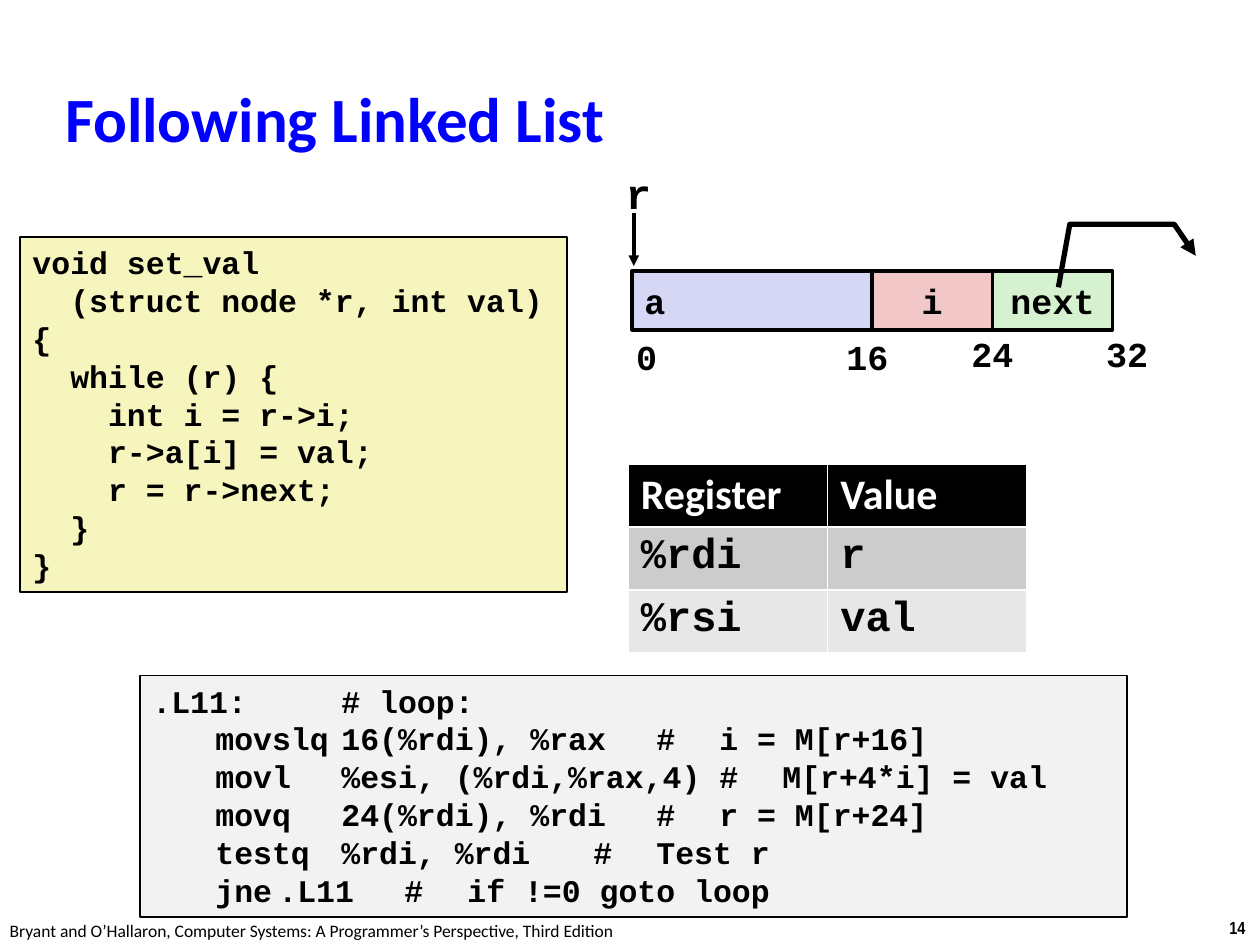
"""Build the slide on following a linked list, from C code to assembly."""
from pptx import Presentation
from pptx.dml.color import RGBColor
from pptx.enum.shapes import MSO_CONNECTOR, MSO_SHAPE
from pptx.enum.text import MSO_ANCHOR, MSO_AUTO_SIZE, PP_ALIGN
from pptx.oxml.ns import qn
from pptx.util import Pt
from lxml.etree import SubElement

COLOURS = {
    "ink": "000000", "title": "0000FF", "white": "FFFFFF",
    "c_code": "F6F5BD", "assembly": "F2F2F2",
    "array": "D6D6F5", "index": "F1C7C7", "next": "D5F1CF",
    "odd_row": "CCCCCC", "even_row": "E7E7E7",
}
CODE_FONT, TEXT_FONT = "Courier New", "Calibri"
CODE_SIZE, CODE_LEADING = 18, 21.6
CHARACTER = 0.6 * CODE_SIZE
ASSEMBLY_STOPS = [column * CHARACTER for column in (2, 10, 30, 34)]

C_CODE = """void set_val
  (struct node *r, int val)
{
  while (r) {
    int i = r->i;
    r->a[i] = val;
    r = r->next;
  }
}"""

ASSEMBLY = [
    ".L11:\t\t# loop:",
    "\tmovslq\t16(%rdi), %rax\t#\ti = M[r+16]",
    "\tmovl\t%esi, (%rdi,%rax,4)\t#\tM[r+4*i] = val",
    "\tmovq\t24(%rdi), %rdi\t#\tr = M[r+24]",
    "\ttestq\t%rdi, %rdi\t#\tTest r",
    "\tjne\t.L11\t#\tif !=0 goto loop",
]


def colour(name):
    return RGBColor.from_string(COLOURS[name])


def write(para, text, size=20, font=CODE_FONT, ink="ink", bold=True, align=PP_ALIGN.LEFT):
    para.alignment = align
    span = para.add_run()
    span.text = text
    span.font.size = Pt(size)
    span.font.name = font
    span.font.bold = bold
    span.font.color.rgb = colour(ink)


class Painter:
    def __init__(self, page):
        self.page = page
        self.shapes = page.shapes

    def title(self, text, left, top, width, height):
        box = self.shapes.title
        box.left, box.top, box.width, box.height = map(Pt, (left, top, width, height))
        frame = box.text_frame
        frame.auto_size = MSO_AUTO_SIZE.NONE
        frame.vertical_anchor = MSO_ANCHOR.MIDDLE
        write(frame.paragraphs[0], text, size=36, font=TEXT_FONT, ink="title")

    def label(self, text, left, top, width, height, **style):
        box = self.shapes.add_textbox(*map(Pt, (left, top, width, height)))
        box.text_frame.word_wrap = False
        write(box.text_frame.paragraphs[0], text, **style)

    def panel(self, left, top, width, height, fill, line=1):
        box = self.shapes.add_shape(MSO_SHAPE.RECTANGLE, *map(Pt, (left, top, width, height)))
        box.shadow.inherit = False
        box.fill.solid()
        box.fill.fore_color.rgb = colour(fill)
        self.outline(box, line)
        return box

    def field(self, text, left, top, width, height, fill, align=PP_ALIGN.CENTER):
        frame = self.panel(left, top, width, height, fill, line=2).text_frame
        frame.word_wrap = False
        frame.vertical_anchor = MSO_ANCHOR.MIDDLE
        write(frame.paragraphs[0], text, align=align)

    def code(self, lines, left, top, width, height, fill, stops=()):
        frame = self.panel(left, top, width, height, fill).text_frame
        frame.word_wrap = True
        frame.vertical_anchor = MSO_ANCHOR.TOP
        for number, line in enumerate(lines):
            para = frame.add_paragraph() if number else frame.paragraphs[0]
            para.line_spacing = Pt(CODE_LEADING)
            body = line.lstrip(" ")
            write(para, body, size=CODE_SIZE)
            properties = para._p.get_or_add_pPr()
            properties.set("marL", str(Pt((len(line) - len(body)) * CHARACTER)))
            properties.set("indent", "0")
            if stops:
                tabs = SubElement(properties, qn("a:tabLst"))
                for stop in stops:
                    SubElement(tabs, qn("a:tab"), pos=str(Pt(stop)), algn="l")

    def outline(self, shape, width, arrow=False):
        shape.line.color.rgb = colour("ink")
        shape.line.width = Pt(width)
        if arrow:
            SubElement(shape.line._get_or_add_ln(), qn("a:tailEnd"), type="triangle")

    def arrow(self, start, end, width):
        line = self.shapes.add_connector(MSO_CONNECTOR.STRAIGHT, *map(Pt, (*start, *end)))
        self.outline(line, width, arrow=True)
        SubElement(line._element.spPr, qn("a:effectLst"))

    def bent_arrow(self, points, width):
        start, *rest = [(Pt(x), Pt(y)) for x, y in points]
        builder = self.shapes.build_freeform(*start, scale=1.0)
        builder.add_line_segments(rest, close=False)
        shape = builder.convert_to_shape()
        shape.fill.background()
        self.outline(shape, width, arrow=True)
        shape.shadow.inherit = False

    def table(self, rows, left, top, width, height):
        frame = self.shapes.add_table(len(rows), len(rows[0]), *map(Pt, (left, top, width, height)))
        fills = ("ink", "odd_row", "even_row")
        for row, (texts, fill) in enumerate(zip(rows, fills)):
            style = {} if row else {"font": TEXT_FONT, "ink": "white"}
            for column, text in enumerate(texts):
                cell = frame.table.cell(row, column)
                cell.fill.solid()
                cell.fill.fore_color.rgb = colour(fill)
                write(cell.text_frame.paragraphs[0], text, size=24, **style)


def main():
    deck = Presentation()
    deck.slide_width, deck.slide_height = Pt(720), Pt(540)
    painter = Painter(deck.slides.add_slide(deck.slide_layouts[5]))

    painter.label("14", 695.5, 520.5, 24.5, 19.5, size=10, font="Arial Narrow")
    painter.label("Bryant and O’Hallaron, Computer Systems: A Programmer’s Perspective, Third Edition",
                  -1.5, 522, 366, 19.5, size=10, font=TEXT_FONT, bold=False)
    painter.code(ASSEMBLY, 80, 386, 564, 138, "assembly", stops=ASSEMBLY_STOPS)
    painter.code(C_CODE.splitlines(), 11.5, 135.5, 312.5, 203, "c_code")
    painter.title("Following Linked List", 30, 44.5, 569, 45.5)
    painter.table([("Register", "Value"), ("%rdi", "r"), ("%rsi", "val")], 359, 265, 228, 87.6)

    painter.arrow((362.2, 121.7), (362.2, 152), 2)
    painter.label("r", 350.6, 92.2, 28.8, 36, size=24)
    painter.field("i", 498.2, 154.8, 69, 33.8, "index")
    painter.field("next", 567.2, 154.8, 68.5, 33.8, "next")
    for offset, left, top, width in (("0", 356.4, 188, 26), ("16", 476.6, 188, 39),
                                     ("24", 548, 186.5, 39), ("32", 625, 186.5, 39)):
        painter.label(offset, left, top, width, 31)
    painter.field("a", 361.2, 154.8, 137, 33.8, "array", align=PP_ALIGN.LEFT)
    painter.bent_arrow([(604.8, 164.2), (611.3, 128.2), (671, 128.2), (683.3, 146.2)], 3)

    deck.save("out.pptx")


if __name__ == "__main__":
    main()
